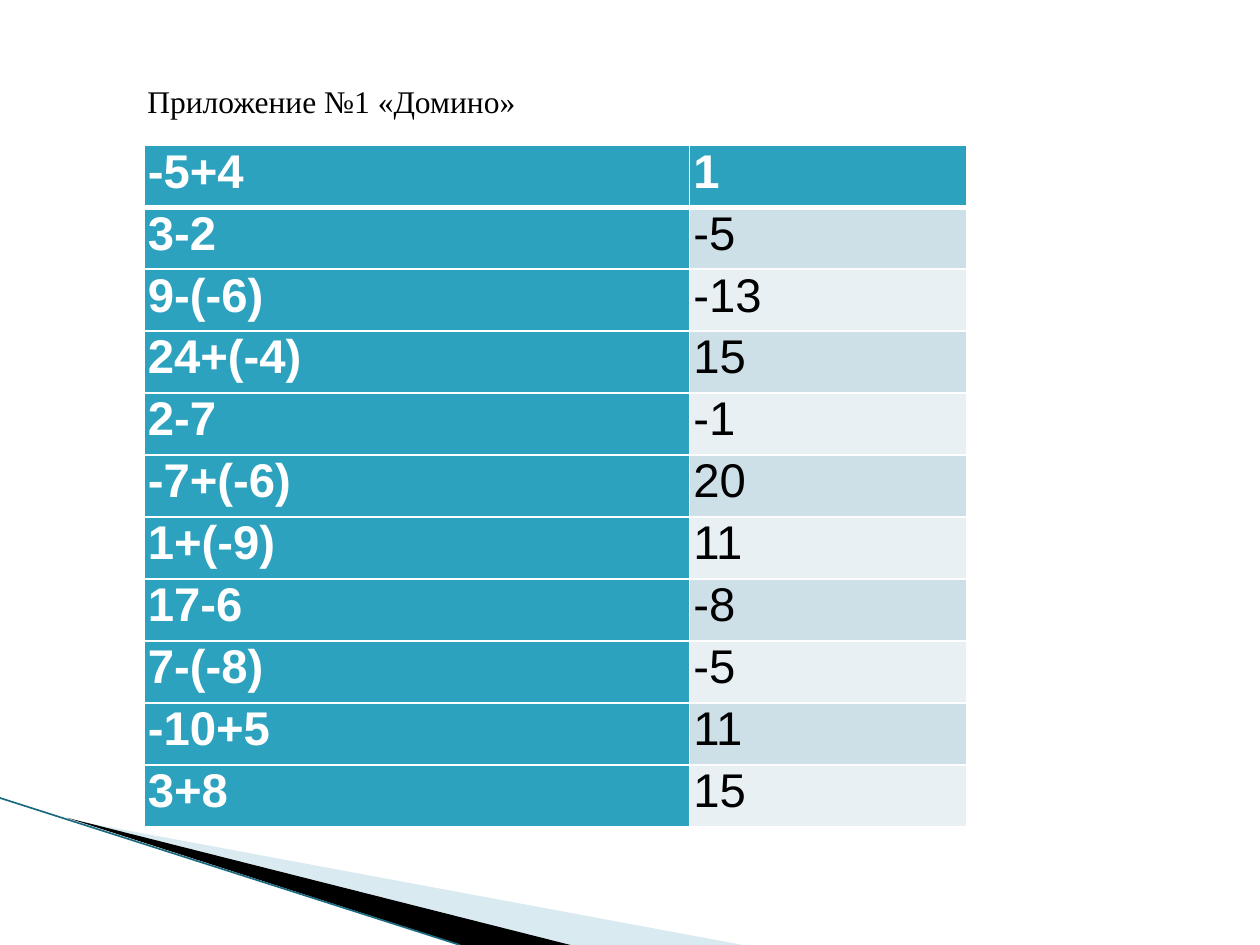
from dataclasses import dataclass

from lxml import etree
from pptx import Presentation
from pptx.dml.color import RGBColor
from pptx.enum.shapes import MSO_CONNECTOR
from pptx.enum.text import MSO_ANCHOR, PP_ALIGN
from pptx.oxml.ns import qn
from pptx.util import Pt

STRAIGHT = MSO_CONNECTOR.STRAIGHT
TOP = MSO_ANCHOR.TOP
LEFT = PP_ALIGN.LEFT

WHITE = RGBColor(0xFF, 0xFF, 0xFF)
BLACK = RGBColor(0x00, 0x00, 0x00)
TEAL = RGBColor(0x2D, 0xA2, 0xBF)
DARK_TEAL = RGBColor(0x1B, 0x6B, 0x80)
PALE_BLUE = RGBColor(0xA0, 0xCB, 0xDC)
BANDS = (RGBColor(0xCD, 0xE0, 0xE8), RGBColor(0xE8, 0xF0, 0xF4))

COLUMN_WIDTHS = (311.8, 158.4)
ROW_HEIGHT = 35.43
DOMINOES = (
    ("-5+4", "1"),
    ("3-2", "-5"),
    ("9-(-6)", "-13"),
    ("24+(-4)", "15"),
    ("2-7", "-1"),
    ("-7+(-6)", "20"),
    ("1+(-9)", "11"),
    ("17-6", "-8"),
    ("7-(-8)", "-5"),
    ("-10+5", "11"),
    ("3+8", "15"),
)


@dataclass(frozen=True)
class Wedge:
    points: tuple
    color: RGBColor
    opacity: int = 100


WEDGES = (
    Wedge(((39.6, 468.4), (424.5, 540), (325.6, 540)), PALE_BLUE, 40),
    Wedge(((38.2, 467.3), (326, 540), (263.5, 540)), BLACK),
)


def set_attributes(target, values: dict) -> None:
    for name, value in values.items():
        setattr(target, name, value)


def set_font(font, color: RGBColor, **values) -> None:
    set_attributes(font, values)
    font.color.rgb = color


def draw_wedge(slide, wedge: Wedge) -> None:
    points = [(Pt(x), Pt(y)) for x, y in wedge.points]
    builder = slide.shapes.build_freeform(*points[0], scale=1.0)
    builder.add_line_segments(points[1:], close=True)
    shape = builder.convert_to_shape()
    shape.shadow.inherit = False
    shape.line.fill.background()
    shape.fill.solid()
    shape.fill.fore_color.rgb = wedge.color
    if wedge.opacity < 100:
        color = shape.fill._xPr.find(qn("a:solidFill"))[0]
        etree.SubElement(color, qn("a:alpha"), val=str(wedge.opacity * 1000))


def draw_edge_line(slide) -> None:
    line = slide.shapes.add_connector(STRAIGHT, Pt(0), Pt(456), Pt(262.8), Pt(540))
    line.line.color.rgb = DARK_TEAL
    line.line.width = Pt(0.95)
    etree.SubElement(line._element.spPr, qn("a:effectLst"))


def add_borders(cell, widths: dict) -> None:
    properties = cell._tc.get_or_add_tcPr()
    for side, width in widths.items():
        border = etree.SubElement(properties, qn(f"a:ln{side}"), w=str(Pt(width)))
        fill = etree.SubElement(border, qn("a:solidFill"))
        etree.SubElement(fill, qn("a:srgbClr"), val=str(WHITE))


def format_cell(cell, text: str, row: int, column: int) -> None:
    heading = row == 0 or column == 0
    set_attributes(cell, {
        "text": text,
        "margin_left": Pt(2.2),
        "margin_right": Pt(2.2),
        "margin_top": 0,
        "margin_bottom": 0,
        "vertical_anchor": TOP,
    })
    add_borders(cell, {"L": 1, "R": 1,
                       "T": 3 if row == 1 else 1,
                       "B": 3 if row == 0 else 1})
    cell.fill.solid()
    cell.fill.fore_color.rgb = TEAL if heading else BANDS[(row - 1) % 2]
    run = cell.text_frame.paragraphs[0].runs[0]
    set_font(run.font, WHITE if heading else BLACK,
             name="Arial", size=Pt(27), bold=heading)


def draw_domino_table(slide) -> None:
    rows = len(DOMINOES)
    table = slide.shapes.add_table(
        rows, len(COLUMN_WIDTHS), Pt(82.3), Pt(83),
        Pt(sum(COLUMN_WIDTHS)), Pt(ROW_HEIGHT * rows)).table
    for column, width in zip(table.columns, COLUMN_WIDTHS):
        column.width = Pt(width)
    for row, values in enumerate(DOMINOES):
        table.rows[row].height = Pt(ROW_HEIGHT)
        for column, text in enumerate(values):
            format_cell(table.cell(row, column), text, row, column)


def write_title(slide) -> None:
    title = slide.shapes.title
    set_attributes(title, {"left": Pt(77), "top": Pt(43.2),
                           "width": Pt(294.5), "height": Pt(29)})
    set_attributes(title.text_frame, {"text": "Приложение №1 «Домино»",
                                      "vertical_anchor": TOP, "word_wrap": True})
    paragraph = title.text_frame.paragraphs[0]
    paragraph.alignment = LEFT
    set_font(paragraph.runs[0].font, BLACK, name="Times New Roman", size=Pt(18))


def main() -> None:
    presentation = Presentation()
    presentation.slide_width = Pt(720)
    presentation.slide_height = Pt(540)
    title_only = presentation.slide_layouts[5]
    slide = presentation.slides.add_slide(title_only)

    # Corner decoration
    for wedge in WEDGES:
        draw_wedge(slide, wedge)
    draw_edge_line(slide)

    # Domino table and its title
    draw_domino_table(slide)
    write_title(slide)
    presentation.save("out.pptx")


if __name__ == "__main__":
    main()
